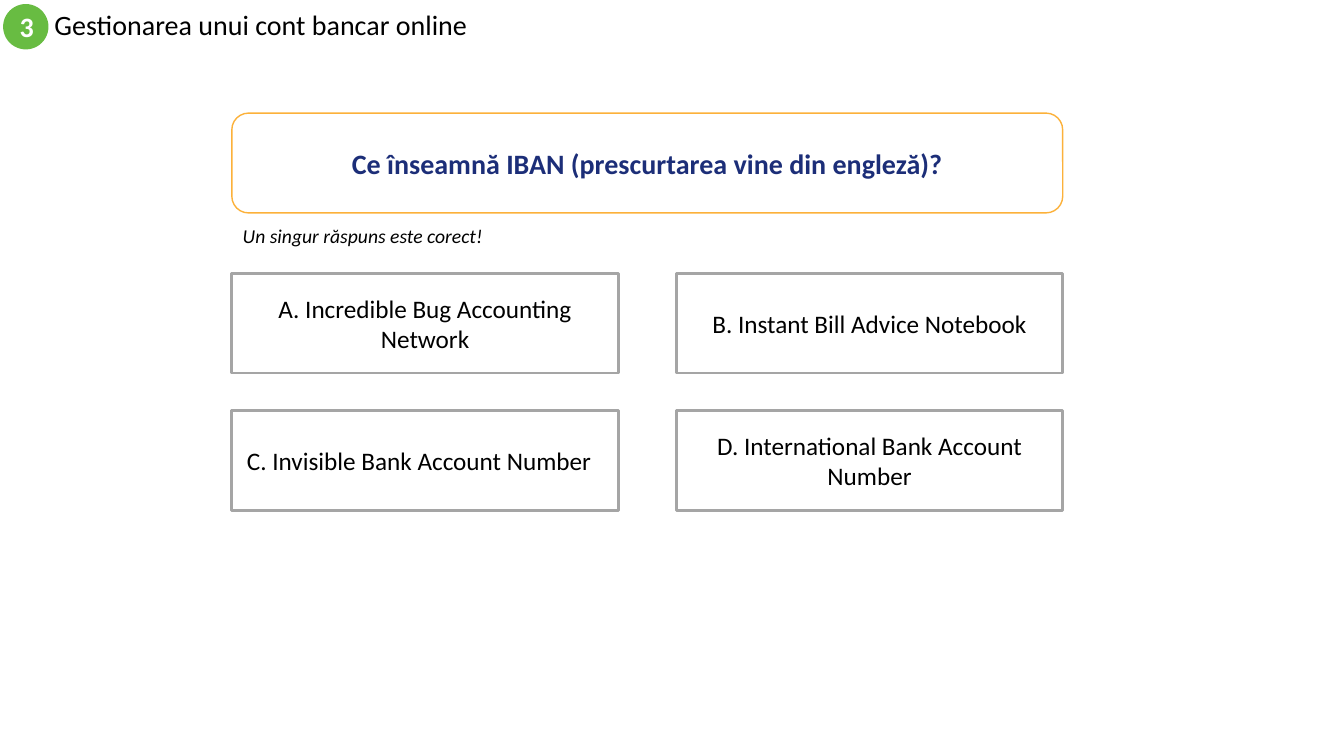
from pptx import Presentation
from pptx import util as u
from pptx.dml.color import RGBColor
from pptx.enum import shapes, text

COLORS = {
    "white": "FFFFFF",
    "black": "000000",
    "green": "68BC42",
    "orange": "FCB13A",
    "navy": "1C2E78",
    "gray": "A5A5A5",
}


def rgb(name):
    return RGBColor.from_string(COLORS[name])


def write(sp, content, font="Calibri", size=18, color="black", bold=False,
          italic=False, align="CENTER", anchor="MIDDLE", spacing=None, right=7.2):
    tf = sp.text_frame
    tf.word_wrap = True
    tf.auto_size = text.MSO_AUTO_SIZE.NONE
    tf.vertical_anchor = text.MSO_ANCHOR[anchor]
    tf.margin_left, tf.margin_right = u.Pt(7.2), u.Pt(right)
    tf.margin_top = tf.margin_bottom = u.Pt(3.6)
    p = tf.paragraphs[0]
    p.alignment = text.PP_ALIGN[align]
    if spacing:
        p.line_spacing = spacing
    r = p.add_run()
    r.text = content
    r.font.name, r.font.size = font, u.Pt(size)
    r.font.bold, r.font.italic = bold, italic
    r.font.color.rgb = rgb(color)


class QuizSlide:
    def __init__(self, prs):
        self.s = prs.slides.add_slide(prs.slide_layouts[5])
        self.s.background.fill.solid()
        self.s.background.fill.fore_color.rgb = rgb("white")

    def title(self, content, box, **fmt):
        sp = self.s.shapes.title
        sp.left, sp.top, sp.width, sp.height = map(u.Pt, box)
        write(sp, content, **fmt)

    def label(self, content, box, **fmt):
        write(self.s.shapes.add_textbox(*map(u.Pt, box)), content, **fmt)

    def shape(self, kind, content, box, fill="white", line=None, weight=1, **fmt):
        sp = self.s.shapes.add_shape(shapes.MSO_SHAPE[kind], *map(u.Pt, box))
        sp.shadow.inherit = False
        sp.fill.solid()
        sp.fill.fore_color.rgb = rgb(fill)
        if line:
            sp.line.color.rgb = rgb(line)
            sp.line.width = u.Pt(weight)
        else:
            sp.line.fill.background()
        write(sp, content, **fmt)


def main():
    prs = Presentation()
    prs.slide_width, prs.slide_height = u.Pt(960), u.Pt(540)
    quiz = QuizSlide(prs)

    quiz.title("Gestionarea unui cont bancar online", (31.7, 2.9, 576, 32.4),
               size=20, align="LEFT", spacing=0.9)
    quiz.shape("OVAL", "3", (2.2, 2.9, 32.4, 32.4), fill="green",
               size=20, color="white", bold=True)

    left, width, height = 165.6, 593.5, 71.3
    quiz.shape("ROUNDED_RECTANGLE", "Ce înseamnă IBAN (prescurtarea vine din engleză)?",
               (left, 80.8, width, height), line="orange",
               size=20, color="navy", bold=True)
    quiz.label("Un singur răspuns este corect!", (166.3, 156.2, 187.2, 24.5),
               size=14, italic=True, align="LEFT", anchor="TOP")

    answers = [
        ("A. Incredible Bug Accounting Network", 7.2),
        ("B. Instant Bill Advice Notebook", 7.2),
        ("C. Invisible Bank Account Number", 15.6),
        ("D. International Bank Account Number", 7.2),
    ]
    answer_width, column_step, row_step = 276, 317.5, 98
    for i, (answer, right) in enumerate(answers):
        row, col = divmod(i, 2)
        box = (left + col * column_step, 195.1 + row * row_step, answer_width, height)
        quiz.shape("RECTANGLE", answer, box, line="gray", weight=2, right=right)

    prs.save("out.pptx")


if __name__ == "__main__":
    main()
